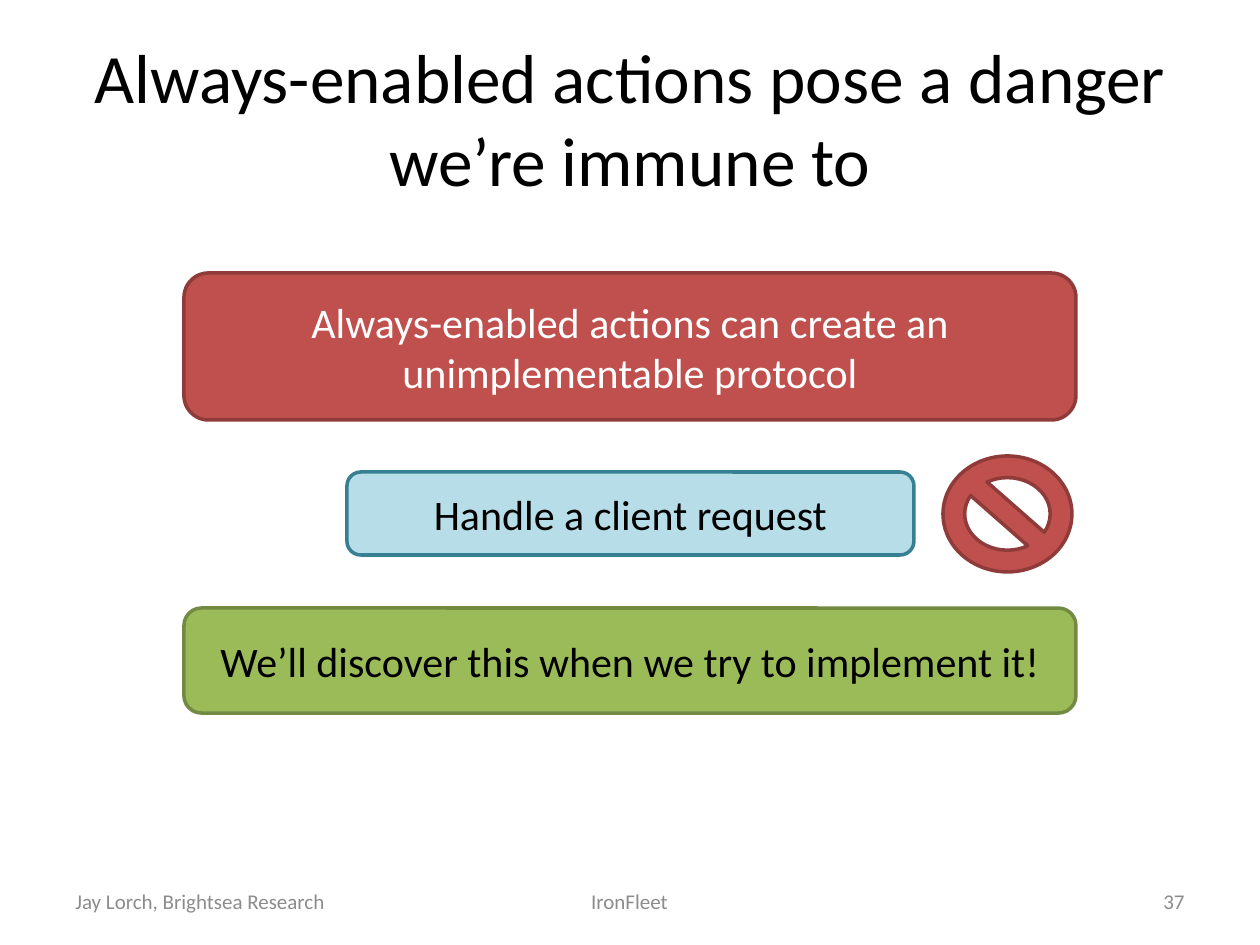
from dataclasses import dataclass

from pptx import Presentation
from pptx.dml.color import RGBColor
from pptx.enum.shapes import MSO_SHAPE
from pptx.enum.text import MSO_ANCHOR, PP_ALIGN
from pptx.util import Emu, Pt

ROUNDED = MSO_SHAPE.ROUNDED_RECTANGLE
NO_SYMBOL = MSO_SHAPE.NO_SYMBOL
MIDDLE = MSO_ANCHOR.MIDDLE
LEFT, CENTER, RIGHT = PP_ALIGN.LEFT, PP_ALIGN.CENTER, PP_ALIGN.RIGHT

PX_PER_INCH = 126
SLIDE_WIDTH, SLIDE_HEIGHT = 1260, 945


@dataclass(frozen=True)
class Theme:
    font: str = "Calibri"
    title_size: float = 39.6
    body_size: float = 24
    footer_size: float = 12
    line_width: float = 2
    black: str = "000000"
    white: str = "FFFFFF"
    gray: str = "8C8C8C"
    red: tuple = ("C0504D", "8E3B39")
    green: tuple = ("9BBB59", "738A42")
    aqua: tuple = ("B7DEE8", "377F92")


THEME = Theme()


def px(length):
    return Emu(round(length * 914400 / PX_PER_INCH))


def write_text(shape, text, size, color, alignment):
    text_frame = shape.text_frame
    text_frame.word_wrap = True
    text_frame.vertical_anchor = MIDDLE
    text_frame.text = text
    paragraph = text_frame.paragraphs[0]
    paragraph.alignment = alignment
    font = paragraph.runs[0].font
    font.name = THEME.font
    font.size = Pt(size)
    font.color.rgb = RGBColor.from_string(color)


def add_label(slide, box, text, size, color, alignment):
    label = slide.shapes.add_textbox(*map(px, box))
    write_text(label, text, size, color, alignment)


def add_filled_shape(slide, kind, box, colors):
    fill_color, line_color = colors
    shape = slide.shapes.add_shape(kind, *map(px, box))
    shape.shadow.inherit = False
    shape.fill.solid()
    shape.fill.fore_color.rgb = RGBColor.from_string(fill_color)
    shape.line.color.rgb = RGBColor.from_string(line_color)
    shape.line.width = Pt(THEME.line_width)
    return shape


def add_card(slide, box, text, colors, text_color):
    card = add_filled_shape(slide, ROUNDED, box, colors)
    write_text(card, text, THEME.body_size, text_color, CENTER)


def add_title(slide, box):
    add_label(slide, box, "Always-enabled actions pose a danger we’re immune to",
              THEME.title_size, THEME.black, CENTER)


def add_argument(slide, box):
    left, top, width, height = box
    discovery_height = 105
    add_card(slide, (left, top, width, 147),
             "Always-enabled actions can create an unimplementable protocol",
             THEME.red, THEME.white)
    add_card(slide, (left, top + height - discovery_height, width, discovery_height),
             "We’ll discover this when we try to implement it!",
             THEME.green, THEME.black)
    add_forbidden_action(slide, (left + 163, top + 183, 725, 116))


def add_forbidden_action(slide, box):
    left, top, width, height = box
    action_width, action_height, sign_width = 567, 83, 129
    action_top = top + (height - action_height) // 2
    add_card(slide, (left, action_top, action_width, action_height),
             "Handle a client request", THEME.aqua, THEME.black)
    add_filled_shape(slide, NO_SYMBOL,
                     (left + width - sign_width, top, sign_width, height), THEME.red)


def add_footer(slide, box):
    left, top, width, height = box
    side_width, middle_width = 294, 399
    cells = [
        (0, side_width, "Jay Lorch, Brightsea Research", LEFT),
        ((width - middle_width) // 2, middle_width, "IronFleet", CENTER),
        (width - side_width, side_width, "37", RIGHT),
    ]
    for offset, cell_width, text, alignment in cells:
        add_label(slide, (left + offset, top, cell_width, height), text,
                  THEME.footer_size, THEME.gray, alignment)


def main():
    presentation = Presentation()
    presentation.slide_width = px(SLIDE_WIDTH)
    presentation.slide_height = px(SLIDE_HEIGHT)
    slide = presentation.slides.add_slide(presentation.slide_layouts[6])
    add_title(slide, (63, 38, 1134, 158))
    add_argument(slide, (184, 273, 892, 440))
    add_footer(slide, (63, 876, 1134, 50))
    presentation.save("out.pptx")


if __name__ == "__main__":
    main()
